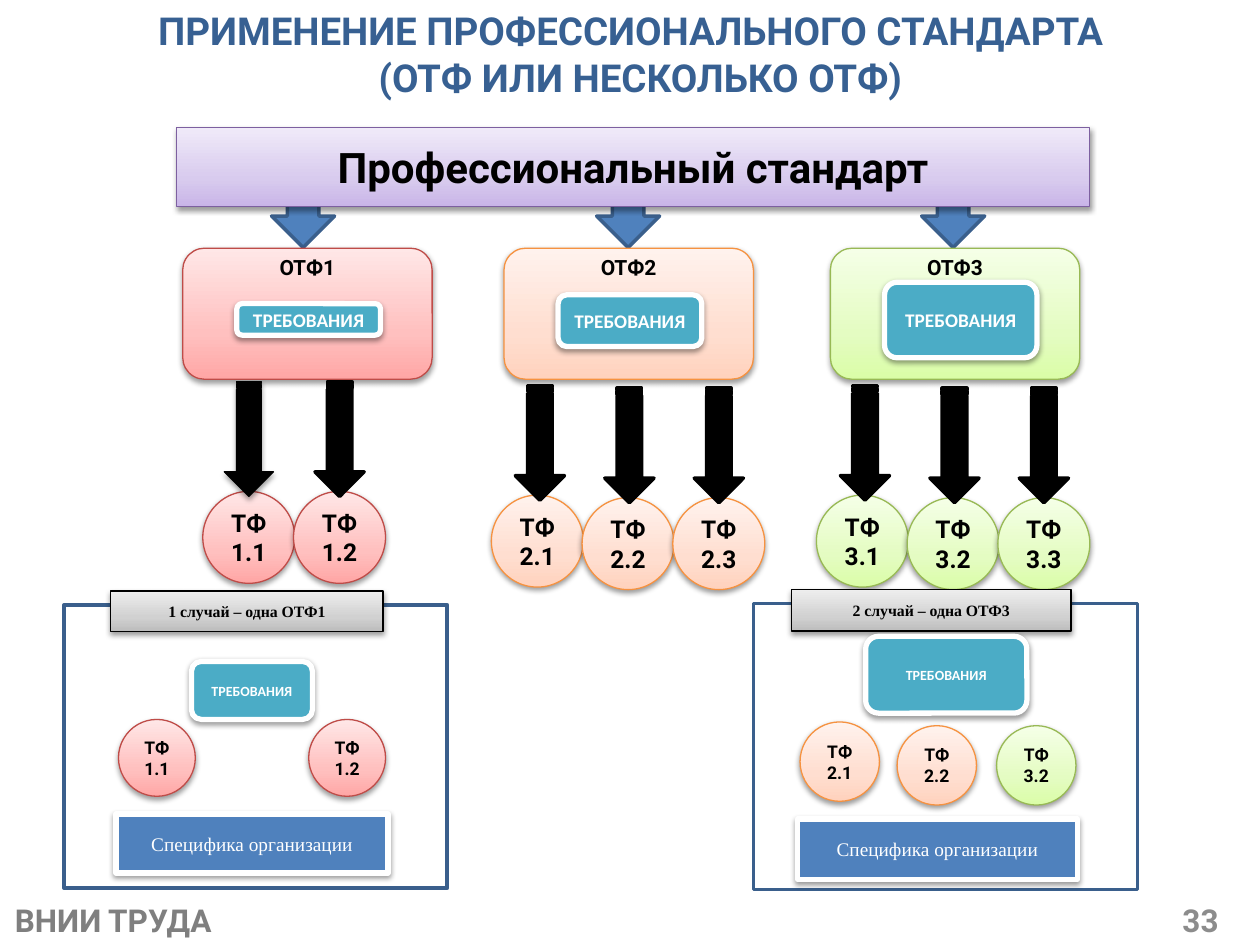
from lxml import etree
from pptx import Presentation
from pptx.dml.color import RGBColor
from pptx.enum.shapes import MSO_SHAPE
from pptx.enum.text import MSO_ANCHOR, PP_ALIGN
from pptx.oxml.ns import qn
from pptx.util import Inches, Pt

RECT, ROUND = MSO_SHAPE.RECTANGLE, MSO_SHAPE.ROUNDED_RECTANGLE
CIRCLE, ARROW = MSO_SHAPE.OVAL, MSO_SHAPE.STRIPED_RIGHT_ARROW
TOP, MIDDLE = MSO_ANCHOR.TOP, MSO_ANCHOR.MIDDLE
LEFT, CENTER, RIGHT = PP_ALIGN.LEFT, PP_ALIGN.CENTER, PP_ALIGN.RIGHT
color = RGBColor.from_string

# Gradients run from the bottom (0 %) through 35 % to the top (100 %)
RED = ("FFA6A5", "FFC0BF", "FFE7E7")
ORANGE = ("FFD2BD", "FFDED0", "FFF2ED")
GREEN = ("DAFDA7", "E4FCC2", "F5FFE7")
PURPLE = ("C9B5E8", "D8CBEE", "F0EAF9")
GRAY = ("BDBDBD", "D1D1D1", "EEEEEE")
EDGE = {RED: "BF4C48", ORANGE: "F69240", GREEN: "98B955"}
BLUE, NAVY, TEAL = "4F81BD", "3A5F8C", "4BACC6"
WHITE, BLACK = "FFFFFF", "000000"
SERIF = "Times New Roman"

deck = Presentation()
deck.slide_width, deck.slide_height = Inches(10), Inches(7.5)
page = deck.slides.add_slide(deck.slide_layouts[6])


def write(at, lines, size, font="Roboto", ink=BLACK, bold=True,
          align=CENTER, anchor=MIDDLE, box=None):
    """Put text in the given shape, or in a new text box at the place."""
    if box is None:
        box = page.shapes.add_textbox(*map(Inches, at))
    else:
        box.text_frame.margin_left = box.text_frame.margin_right = Inches(0.05)
    frame = box.text_frame
    frame.word_wrap = True
    frame.vertical_anchor = anchor
    for number, line in enumerate(lines):
        para = frame.add_paragraph() if number else frame.paragraphs[0]
        para.alignment = align
        span = para.add_run()
        span.text = line
        span.font.size, span.font.name, span.font.bold = Pt(size), font, bold
        span.font.color.rgb = color(ink)


def draw(kind, at, fill, line, weight=0.75, shadow=True, turn=0):
    shape = page.shapes.add_shape(kind, *map(Inches, at))
    shape.rotation = turn
    if isinstance(fill, tuple):
        shape.fill.gradient()
        shape.fill.gradient_angle = 90
        stops = shape._element.spPr.find(".//" + qn("a:gsLst"))
        stops.clear()
        for position, tone in zip((0, 35, 100), fill):
            stop = etree.SubElement(stops, qn("a:gs"), pos=str(position * 1000))
            etree.SubElement(stop, qn("a:srgbClr"), val=tone)
    else:
        shape.fill.solid()
        shape.fill.fore_color.rgb = color(fill)
    shape.line.color.rgb = color(line)
    shape.line.width = Pt(weight)
    shape.shadow.inherit = False
    if shadow:
        effects = shape._element.spPr.find(qn("a:effectLst"))
        outer = etree.SubElement(effects, qn("a:outerShdw"), blurRad="40000",
                                 dist="20000", dir="5400000", rotWithShape="0")
        tone = etree.SubElement(outer, qn("a:srgbClr"), val=BLACK)
        etree.SubElement(tone, qn("a:alpha"), val="38000")
    return shape


# Blue arrows from the standard to its functions
for left in (2.14, 7.3, 4.72):
    draw(ARROW, (left, 1.45, 0.53, 0.5), BLUE, NAVY, 2, False, 90)

# Function columns: card, requirements, circles and black arrows
# number, card left, tones, requirements place, first circle left,
# circle tops, arrow offset from circle, arrow step
COLUMNS = [
    (1, 1.45, RED, (1.88, 2.41, 1.14, 0.25), 1.61, (3.9, 3.9), 0.09, 0.72),
    (2, 4, ORANGE, (4.43, 2.34, 1.14, 0.41), 3.9, (3.93, 3.95, 3.95), 0.07, 0.71),
    (3, 6.59, GREEN, (7.02, 2.24, 1.21, 0.6), 6.48, (3.93, 3.95, 3.95), 0.07, 0.71),
]
for number, left, tones, needs_at, first, tops, offset, step in COLUMNS:
    draw(ROUND, (left, 1.97, 1.98, 1.04), tones, EDGE[tones])
    write((left, 1.97, 1.98, 0.3), [f"ОТФ{number}"], 12, anchor=TOP)
    needs = draw(ROUND, needs_at, TEAL, WHITE, 3)
    write(needs_at, ["ТРЕБОВАНИЯ"], 11, "Calibri", WHITE, box=needs)
    for index, top in enumerate(tops):
        place = (first + 0.72 * index, top, 0.73, 0.73)
        circle = draw(CIRCLE, place, tones, EDGE[tones])
        write(place, [f"ТФ {number}.{index + 1}"], 14, box=circle)
    for index, top in enumerate(tops):
        faint = number == 1 and index == 0
        draw(ARROW, (first - offset + step * index, top - 0.61, 0.91, 0.39),
             BLACK, BLACK, 0.75 if faint else 2, faint, 90)

# Banner and title
banner_at = (1.4, 1.01, 7.25, 0.63)
banner = draw(RECT, banner_at, PURPLE, "7D60A0")
write(banner_at, ["Профессиональный стандарт"], 24, box=banner)
write((0.18, 0.1, 9.73, 0.65),
      ["ПРИМЕНЕНИЕ ПРОФЕССИОНАЛЬНОГО СТАНДАРТА ", " (ОТФ ИЛИ НЕСКОЛЬКО ОТФ)"],
      22, ink="376092")

# Case panels: frame, organisation, heading, requirements, circle size, circles
CASES = [
    ((0.51, 4.8, 3.04, 2.25), (0.92, 6.46, 2.16, 0.47),
     (0.88, 4.69, 2.16, 0.32), "1 случай – одна ОТФ1", (1.52, 5.25, 0.96, 0.46),
     0.61, [("1.1", 0.94, 5.71, RED), ("1.2", 2.45, 5.71, RED)]),
    ((5.98, 4.79, 3.05, 2.27), (6.33, 6.5, 2.22, 0.48),
     (6.28, 4.68, 2.22, 0.33), "2 случай – одна ОТФ3", (6.87, 5.05, 1.28, 0.61),
     0.63, [("2.1", 6.35, 5.73, ORANGE), ("2.2", 7.12, 5.76, ORANGE),
            ("3.2", 7.91, 5.76, GREEN)]),
]
for frame_at, firm_at, head_at, heading, needs_at, size, circles in CASES:
    draw(RECT, frame_at, WHITE, NAVY, 2, False)
    firm = draw(RECT, firm_at, BLUE, WHITE, 3)
    write(firm_at, ["Специфика организации"], 11, SERIF, WHITE, False, box=firm)
    head = draw(RECT, head_at, GRAY, BLACK)
    write(head_at, [heading], 9, SERIF, box=head)
    needs = draw(ROUND, needs_at, TEAL, WHITE, 3)
    write(needs_at, ["ТРЕБОВАНИЯ"], 8, "Calibri", WHITE, box=needs)
    for code, left, top, tones in circles:
        place = (left, top, size, size)
        circle = draw(CIRCLE, place, tones, EDGE[tones])
        write(place, [f"ТФ {code}"], 10, box=circle)

# Footer
write((7.44, 7.1, 2.33, 0.4), ["33"], 18, ink="8C8C8C", align=RIGHT)
write((0.02, 7.1, 2.36, 0.4), ["ВНИИ ТРУДА"], 18, ink="7F7F7F",
      align=LEFT, anchor=TOP)

deck.save("out.pptx")
